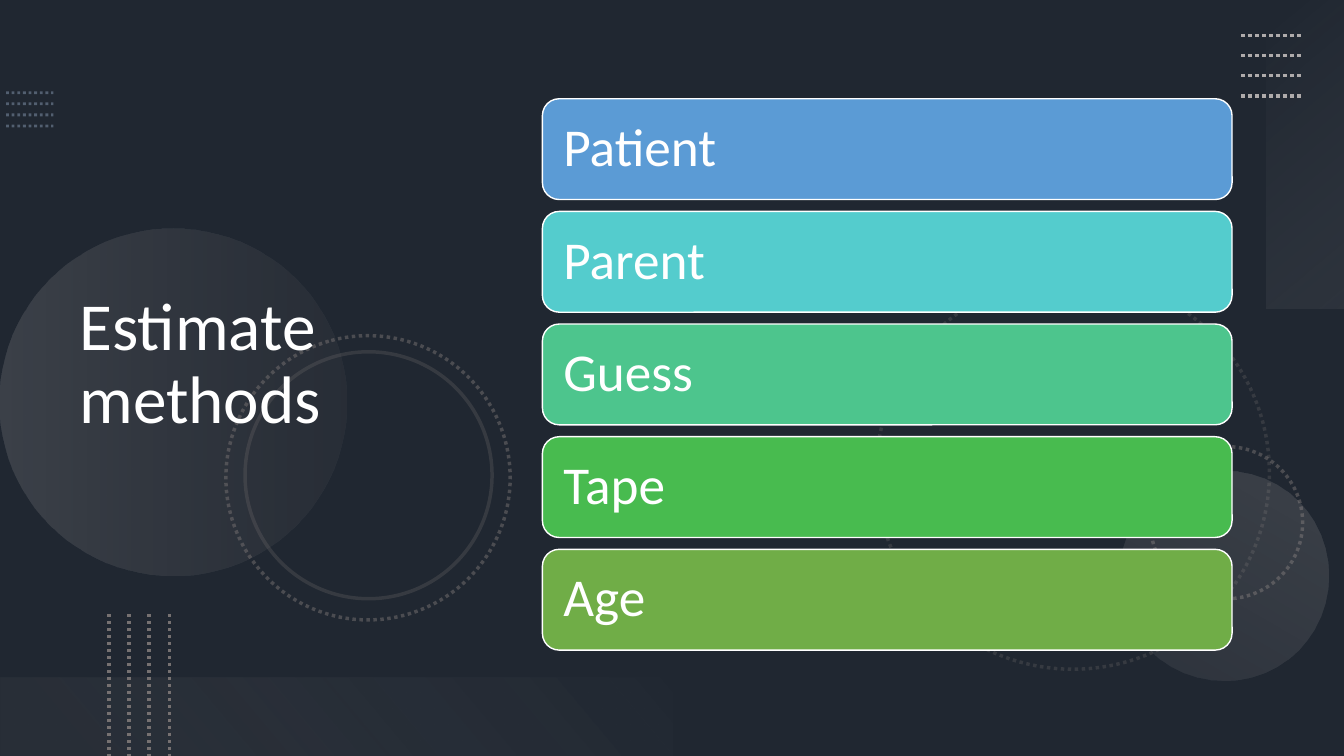
from pptx import Presentation
from pptx.dml.color import RGBColor
from pptx.enum.dml import MSO_LINE
from pptx.enum.shapes import MSO_CONNECTOR, MSO_SHAPE as Geo
from pptx.enum.text import MSO_ANCHOR, PP_ALIGN
from pptx.oxml.ns import qn
from pptx.util import Inches, Pt
from lxml.etree import SubElement

HEX = {"slate": "44546A", "black": "000000", "white": "FFFFFF",
       "blue": "8497B0", "grey": "767171", "silver": "AFABAB",
       "pale": "F5F5F5", "mist": "F1F0F0"}
CARDS = [("Patient", "5B9BD5"), ("Parent", "54CCCD"), ("Guess", "4DC58D"),
         ("Tape", "48BB4F"), ("Age", "70AD47")]


def rgb(name):
    return RGBColor.from_string(HEX.get(name, name))


def fade(item, *alphas):
    """Set the opacity, in percent, of the item's colours in order."""
    tones = item._element.spPr.iter(qn("a:srgbClr"))
    for tone, alpha in zip(list(tones), alphas):
        SubElement(tone, qn("a:alpha"), val=str(alpha * 1000))


def add_geo(slide, geo, box, turn=0):
    shape = slide.shapes.add_shape(geo, *map(Inches, box))
    shape.shadow.inherit = False
    shape.rotation = turn
    shape.fill.background()
    shape.line.fill.background()
    return shape


def add_glow(slide, geo, box, turn, stops, angle):
    """Add a gradient shape; each stop is position, colour, opacity."""
    shape = add_geo(slide, geo, box, turn)
    shape.fill.gradient()
    shape.fill.gradient_angle = 360 - angle
    for stop, (pos, tone, _) in zip(shape.fill.gradient_stops, stops):
        stop.position = pos
        stop.color.rgb = rgb(tone)
    fade(shape, *[alpha for _, _, alpha in stops])


def set_line(item, tone, width, dots=True, alpha=100):
    item.line.color.rgb = rgb(tone)
    item.line.width = Pt(width)
    if dots:
        item.line.dash_style = MSO_LINE.ROUND_DOT
    if alpha < 100:
        fade(item, alpha)


def add_ring(slide, left, top, size, turn, alpha, dots=True):
    ring = add_geo(slide, Geo.OVAL, (left, top, size, size), turn)
    set_line(ring, "grey", 2.5, dots, alpha)


def add_dots(slide, start, end, step, tone, width=2.5, alpha=100):
    """Add four dotted lines, each moved by step from the one before."""
    for i in range(4):
        dx, dy = step[0] * i, step[1] * i
        ends = (start[0] + dx, start[1] + dy, end[0] + dx, end[1] + dy)
        line = slide.shapes.add_connector(MSO_CONNECTOR.STRAIGHT,
                                          *map(Inches, ends))
        set_line(line, tone, width, alpha=alpha)
        SubElement(line._element.spPr, qn("a:effectLst"))


def set_text(shape, text, size, inset=0.1):
    frame = shape.text_frame
    frame.word_wrap = True
    frame.vertical_anchor = MSO_ANCHOR.MIDDLE
    frame.margin_left = frame.margin_right = Inches(inset)
    para = frame.paragraphs[0]
    para.alignment = PP_ALIGN.LEFT
    para.line_spacing = 0.9
    run = para.add_run()
    run.text = text
    run.font.name = "Calibri"
    run.font.size = Pt(size)
    run.font.color.rgb = rgb("white")


def add_decor(slide):
    veil = add_geo(slide, Geo.RECTANGLE, (0, 0, 13.33, 7.5))
    veil.fill.solid()
    veil.fill.fore_color.rgb = rgb("black")
    fade(veil, 53)
    add_dots(slide, (0.06, 0.92), (0.53, 0.92), (0, 0.11), "blue", 2, 50)
    add_ring(slide, 8.69, 2.74, 3.9, 75, 25)
    add_ring(slide, 11.41, 4.43, 1.51, 270, 50)
    add_glow(slide, Geo.OVAL, (0, 2.27, 3.44, 3.44), 270,
             [(0, "silver", 20), (1, "grey", 10)], 90)
    add_glow(slide, Geo.OVAL, (11.1, 4.67, 2.08, 2.08), 210,
             [(0, "silver", 10), (1, "silver", 20)], 90)
    add_ring(slide, 2.24, 3.33, 2.82, 75, 50)
    add_ring(slide, 2.43, 3.49, 2.45, 75, 25, dots=False)
    add_glow(slide, Geo.RECTANGLE, (11.42, 1.14, 3.06, 0.78), 270,
             [(0, "pale", 0), (1, "silver", 10)], 140)
    add_dots(slide, (12.31, 0.35), (12.91, 0.35), (0, 0.2), "silver")
    add_glow(slide, Geo.RECTANGLE, (0, 6.72, 6.67, 0.78), 180,
             [(0.1, "grey", 10), (1, "mist", 0)], 140)
    add_dots(slide, (1.08, 6.09), (1.08, 7.5), (0.2, 0), "grey")


def add_cards(slide):
    first, last = 0.98, 5.45
    pitch = (last - first) / (len(CARDS) - 1)
    for i, (text, tone) in enumerate(CARDS):
        box = (5.38, first + i * pitch, 6.84, 1)
        card = add_geo(slide, Geo.ROUNDED_RECTANGLE, box)
        card.fill.solid()
        card.fill.fore_color.rgb = rgb(tone)
        set_line(card, "white", 1, dots=False)
        set_text(card, text, 38, inset=0.16)


def main():
    deck = Presentation()
    deck.slide_width, deck.slide_height = Inches(13.33), Inches(7.5)
    slide = deck.slides.add_slide(deck.slide_layouts[6])
    back = slide.background.fill
    back.solid()
    back.fore_color.rgb = rgb("slate")
    add_decor(slide)
    title = slide.shapes.add_textbox(*map(Inches, (0.69, 0.54, 4.59, 6.17)))
    set_text(title, "Estimate methods", 48)
    add_cards(slide)
    deck.save("out.pptx")


if __name__ == "__main__":
    main()
